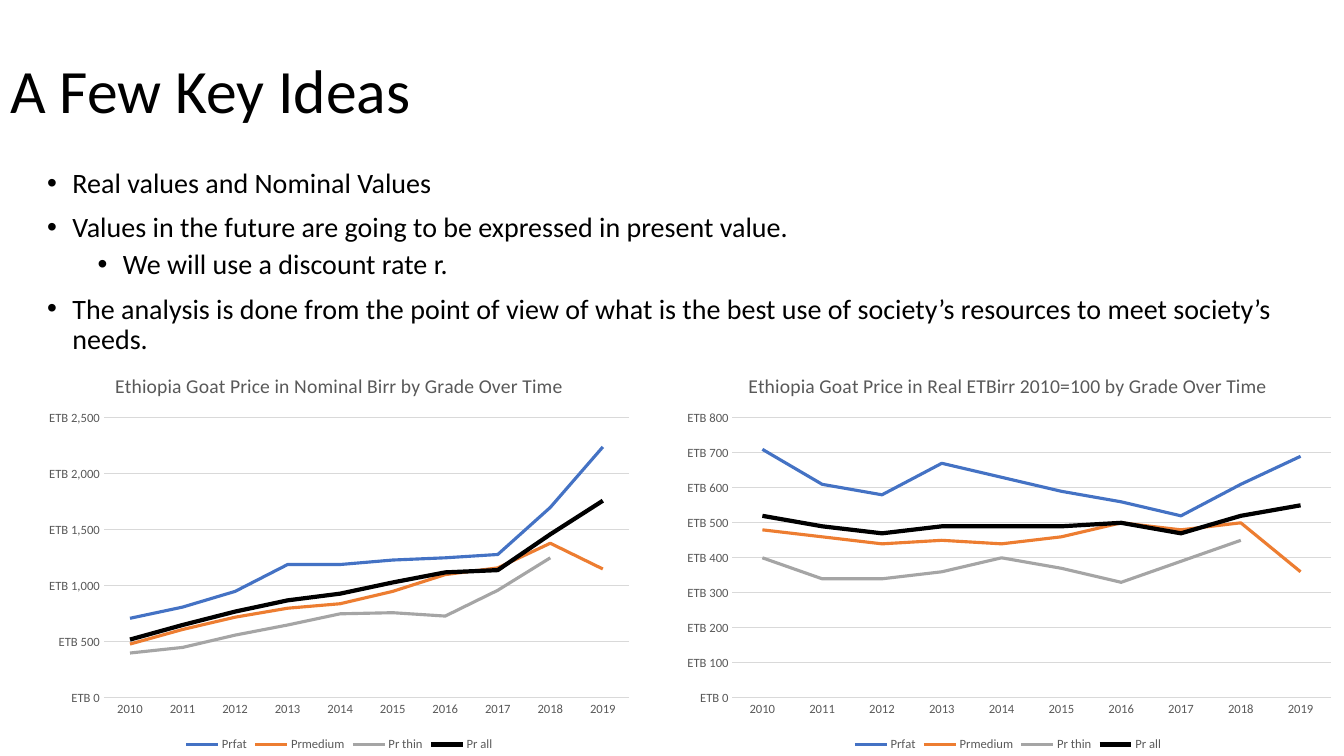
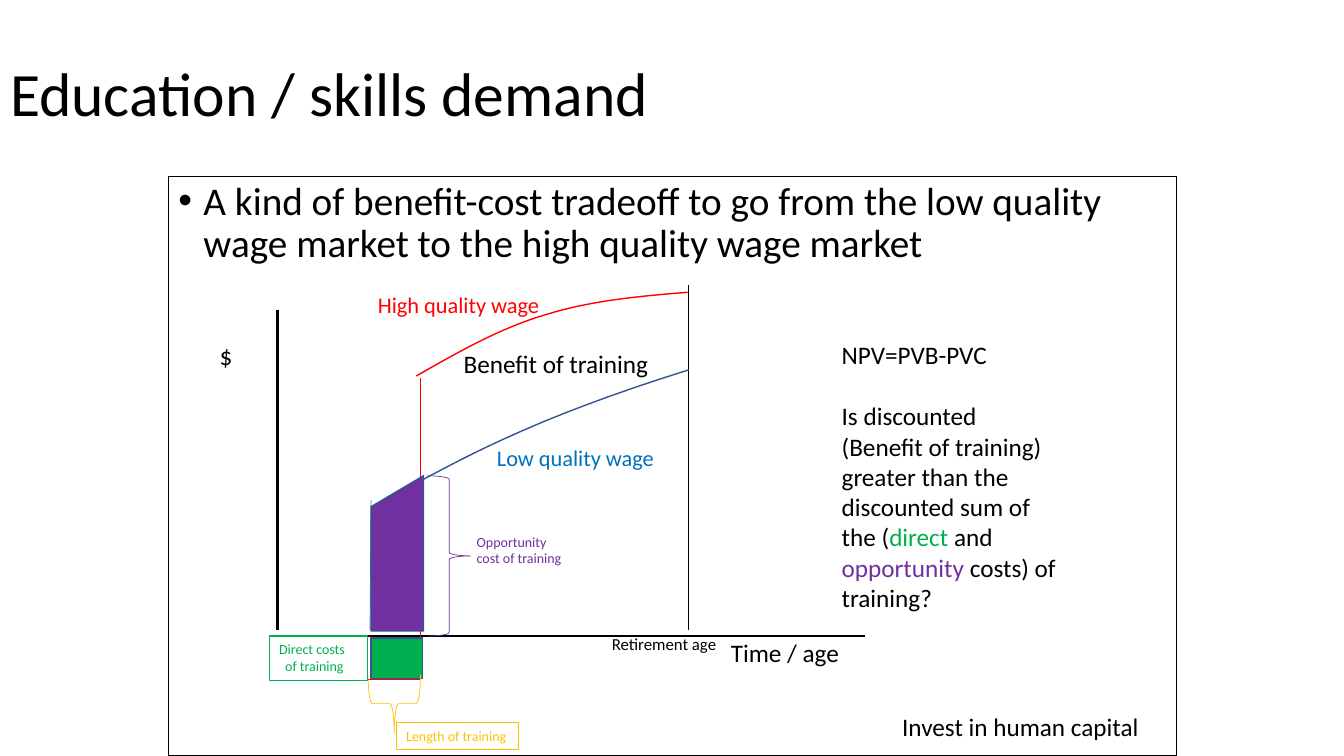
from dataclasses import dataclass

from lxml import etree
from pptx import Presentation
from pptx.chart.data import CategoryChartData
from pptx.dml.color import RGBColor
from pptx.enum.chart import XL_CHART_TYPE, XL_LEGEND_POSITION, XL_TICK_MARK
from pptx.enum.shapes import MSO_CONNECTOR, MSO_SHAPE
from pptx.enum.text import MSO_ANCHOR, PP_ALIGN
from pptx.oxml.ns import qn
from pptx.util import Inches, Pt

LINE_CHART = XL_CHART_TYPE.LINE
LEGEND_BOTTOM = XL_LEGEND_POSITION.BOTTOM
NO_TICK = XL_TICK_MARK.NONE
STRAIGHT = MSO_CONNECTOR.STRAIGHT
RECTANGLE = MSO_SHAPE.RECTANGLE
SLOPED_BAR = MSO_SHAPE.FLOWCHART_MANUAL_INPUT
RIGHT_BRACE, LEFT_BRACE = MSO_SHAPE.RIGHT_BRACE, MSO_SHAPE.LEFT_BRACE
MIDDLE, TOP = MSO_ANCHOR.MIDDLE, MSO_ANCHOR.TOP
LEFT = PP_ALIGN.LEFT
TITLE_ONLY = 5


@dataclass(frozen=True)
class Theme:
    font: str = "Calibri"
    black: str = "000000"
    gray_text: str = "595959"
    grid: str = "D9D9D9"
    blue: str = "4472C4"
    dark_blue: str = "325491"
    sky: str = "0070C0"
    orange: str = "ED7D31"
    silver: str = "A5A5A5"
    red: str = "FF0000"
    green: str = "00B050"
    purple: str = "7030A0"
    gold: str = "FFC000"
    title: int = 44
    lead: int = 28
    body: int = 20
    label: int = 18
    wage: int = 16
    chart_title: int = 14
    small: int = 12
    tiny: int = 10
    axis: int = 9


THEME = Theme()
WIDTH, HEIGHT = 13.33, 7.5
TITLE_WIDTH, TITLE_BOTTOM = 12.42, 1.85

# (text, level)
KEY_IDEAS = [
    ("Real values and Nominal Values", 0),
    ("Values in the future are going to be expressed in present value.", 0),
    ("We will use a discount rate r.", 1),
    ("The analysis is done from the point of view of what is the best use of "
     "society’s resources to meet society’s needs.", 0),
]
TRADEOFF = [("A kind of benefit-cost tradeoff to go from the low quality wage market "
             "to the high quality wage market", 0)]

YEARS = [str(year) for year in range(2010, 2020)]
GRADES = [("Prfat", THEME.blue, 2.25), ("Prmedium", THEME.orange, 2.25),
          ("Pr thin", THEME.silver, 2.25), ("Pr all", THEME.black, 3)]
PRICE_CHARTS = [
    dict(title="Ethiopia Goat Price in Nominal Birr by Grade Over Time",
         frame=(0.37, 3.53, 5.99, 3.97), plot=(0.11, 0.155, 0.87, 0.70),
         top=2500, step=500,
         prices=[[710, 810, 950, 1190, 1190, 1230, 1250, 1280, 1700, 2240],
                 [480, 610, 720, 800, 840, 950, 1100, 1160, 1380, 1150],
                 [400, 450, 560, 650, 750, 760, 730, 960, 1250, None],
                 [520, 650, 770, 870, 930, 1030, 1120, 1140, 1460, 1760]]),
    dict(title="Ethiopia Goat Price in Real ETBirr 2010=100 by Grade Over Time",
         frame=(WIDTH / 2, 3.53, WIDTH / 2, 3.97), plot=(0.09, 0.155, 0.89, 0.70),
         top=800, step=100,
         prices=[[710, 610, 580, 670, 630, 590, 560, 520, 610, 690],
                 [480, 460, 440, 450, 440, 460, 500, 480, 500, 360],
                 [400, 340, 340, 360, 400, 370, 330, 390, 450, None],
                 [520, 490, 470, 490, 490, 490, 500, 470, 520, 550]]),
]

# Places on the wage diagram
AXIS_X, AXIS_Y = 2.75, 6.31
TRAINING_START, TRAINING_END, RETIREMENT = 3.67, 4.17, 6.83
COST_BOTTOM = 6.74

# (start, end, color, weight)
DIAGRAM_LINES = [
    ((AXIS_X, 3.08), (AXIS_X, 6.25), THEME.black, 2),
    ((AXIS_X, AXIS_Y), (8.58, AXIS_Y), THEME.black, 2),
    ((TRAINING_START, 6.25), (3.68, 4.96), THEME.blue, 0.5),
    ((TRAINING_START, AXIS_Y), (TRAINING_START, 6.71), THEME.red, 0.5),
    ((TRAINING_END, COST_BOTTOM), (TRAINING_END, 6.28), THEME.red, 0.5),
    ((3.65, COST_BOTTOM), (TRAINING_END, COST_BOTTOM), THEME.red, 0.5),
    ((TRAINING_END, 3.75), (TRAINING_END, AXIS_Y), THEME.red, 0.5),
    ((RETIREMENT, 6.25), (RETIREMENT, 2.83), THEME.black, 0.5),
]
# (start, cubic segments, color)
WAGE_CURVES = [
    ((3.83, 4.96), [((4.55, 4.56), (5.26, 4.16), (6.83, 3.67))], THEME.dark_blue),
    ((4.13, 3.73), [((4.55, 3.49), (4.97, 3.25), (5.42, 3.12)),
                    ((5.87, 2.98), (6.34, 2.94), (6.82, 2.9))], THEME.red),
]
# (preset, frame, fill, line, weight, rotation)
COST_SHAPES = [
    (RECTANGLE, (3.68, 6.33, 0.51, 0.4), THEME.green, THEME.dark_blue, 1, 0),
    (SLOPED_BAR, (3.68, 4.72, 0.52, 1.54), THEME.purple, THEME.dark_blue, 1, 0),
    (RIGHT_BRACE, (4.24, 4.72, 0.43, 1.59), None, THEME.purple, 0.5, 0),
    (LEFT_BRACE, (3.62, 6.72, 0.58, 0.52), None, THEME.gold, 0.5, 270),
]
# (text, frame, size, color, wraps)
LABELS = [
    ("Time / age", (7.15, 6.27, 1.29, 0.4), THEME.label, THEME.black, False),
    ("$", (2.08, 3.33, 0.34, 0.4), THEME.label, THEME.black, False),
    ("High quality wage", (3.65, 2.84, 2.19, 0.37), THEME.wage, THEME.red, True),
    ("Low quality wage", (4.83, 4.36, 1.99, 0.37), THEME.wage, THEME.sky, True),
    ("Retirement age", (5.97, 6.24, 2, 0.3), THEME.small, THEME.black, True),
    ("Opportunity cost of training", (4.63, 5.24, 1.12, 0.44), THEME.tiny, THEME.purple, True),
    ("Benefit of training", (4.5, 3.41, 2.06, 0.4), THEME.label, THEME.black, False),
    ("Invest in human capital", (8.85, 7.01, 2.57, 0.4), THEME.label, THEME.black, False),
]
NPV_QUESTION = [
    ("Is discounted (Benefit of training) greater than the discounted sum of the (", THEME.black),
    ("direct", THEME.green), (" and ", THEME.black),
    ("opportunity ", THEME.purple), ("costs) of training?", THEME.black),
]


def rgb(color):
    return RGBColor.from_string(color)


def inches(values):
    return [Inches(value) for value in values]


def set_font(font, size, color):
    font.name, font.size, font.bold = THEME.font, Pt(size), False
    font.color.rgb = rgb(color)


def set_line(line, color, weight):
    line.color.rgb = rgb(color)
    line.width = Pt(weight)


def add_run(paragraph, text, size, color=THEME.black):
    run = paragraph.add_run()
    run.text = text
    set_font(run.font, size, color)


def add_title_slide(presentation, title, top=0):
    slide = presentation.slides.add_slide(presentation.slide_layouts[TITLE_ONLY])
    shape = slide.shapes.title
    shape.left, shape.top, shape.width, shape.height = inches(
        (0, top, TITLE_WIDTH, TITLE_BOTTOM - top))
    frame = shape.text_frame
    frame.vertical_anchor = MIDDLE
    paragraph = frame.paragraphs[0]
    paragraph.alignment, paragraph.line_spacing = LEFT, 0.9
    add_run(paragraph, title, THEME.title)
    return slide


def add_text(slide, place, paragraphs, size, outline=None, wrap=True):
    """Add a text box; each paragraph is a list of (text, color) runs."""
    box = slide.shapes.add_textbox(*inches(place))
    frame = box.text_frame
    frame.word_wrap, frame.vertical_anchor = wrap, TOP
    if outline:
        set_line(box.line, outline, 0.75)
    for index, runs in enumerate(paragraphs):
        paragraph = frame.add_paragraph() if index else frame.paragraphs[0]
        paragraph.alignment = LEFT
        for text, color in runs:
            add_run(paragraph, text, size, color)
    return frame.paragraphs


def indent(paragraph, left, first=0.0):
    properties = paragraph._p.get_or_add_pPr()
    properties.set("marL", str(Inches(left)))
    properties.set("indent", str(Inches(first)))
    return properties


def add_bullets(slide, place, items, size, outline=None):
    runs = [[(text, THEME.black)] for text, _ in items]
    paragraphs = add_text(slide, place, runs, size, outline)
    for paragraph, (_, level) in zip(paragraphs, items):
        paragraph.level = level
        paragraph.line_spacing = 0.9
        paragraph.space_before = Pt(5 if level else 10)
        properties = indent(paragraph, 0.25 + 0.5 * level, -0.25)
        etree.SubElement(properties, qn("a:buFont")).set("typeface", "Arial")
        etree.SubElement(properties, qn("a:buChar")).set("char", "•")


def place_plot(chart, shares):
    """Fix the inner plot area as shares of the chart frame."""
    area = chart._chartSpace.find(".//" + qn("c:plotArea"))
    for old_layout in area.findall(qn("c:layout")):
        area.remove(old_layout)
    layout = etree.Element(qn("c:layout"))
    area.insert(0, layout)
    manual = etree.SubElement(layout, qn("c:manualLayout"))
    settings = [("layoutTarget", "inner"), ("xMode", "edge"), ("yMode", "edge"),
                *zip("xywh", shares)]
    for tag, value in settings:
        etree.SubElement(manual, qn("c:" + tag)).set("val", str(value))


def add_price_chart(slide, content):
    data = CategoryChartData()
    data.categories = YEARS
    for (name, _, _), prices in zip(GRADES, content["prices"]):
        data.add_series(name, prices)
    chart = slide.shapes.add_chart(LINE_CHART, *inches(content["frame"]), data).chart
    set_font(chart.font, THEME.tiny, THEME.black)
    chart.has_title = True
    add_run(chart.chart_title.text_frame.paragraphs[0], content["title"],
            THEME.chart_title, THEME.gray_text)
    chart.has_legend = True
    chart.legend.position = LEGEND_BOTTOM
    chart.legend.include_in_layout = False
    set_font(chart.legend.font, THEME.axis, THEME.gray_text)

    for axis in (chart.category_axis, chart.value_axis):
        axis.major_tick_mark = axis.minor_tick_mark = NO_TICK
        set_font(axis.tick_labels.font, THEME.axis, THEME.gray_text)
    set_line(chart.category_axis.format.line, THEME.grid, 0.75)
    values = chart.value_axis
    values.format.line.fill.background()
    values.minimum_scale, values.maximum_scale = 0, content["top"]
    values.major_unit = content["step"]
    set_line(values.major_gridlines.format.line, THEME.grid, 0.75)
    values.tick_labels.number_format = r"[$ETB]\ #,##0"
    values.tick_labels.number_format_is_linked = False

    plot = chart.plots[0]
    plot.vary_by_categories = False
    for series, (_, color, weight) in zip(plot.series, GRADES):
        series.smooth = False
        set_line(series.format.line, color, weight)
    place_plot(chart, content["plot"])


def add_line(slide, start, end, color, weight):
    connector = slide.shapes.add_connector(STRAIGHT, *inches(start + end))
    set_line(connector.line, color, weight)
    etree.SubElement(connector._element.spPr, qn("a:effectLst"))


def curve_points(start, segments, steps=16):
    """Sample joined cubic Bezier segments."""
    points = []
    for first, second, end in segments:
        for step in range(1, steps + 1):
            t = step / steps
            weights = ((1 - t) ** 3, 3 * t * (1 - t) ** 2, 3 * t * t * (1 - t), t ** 3)
            points.append([sum(weight * value for weight, value in zip(weights, axis))
                           for axis in zip(start, first, second, end)])
        start = end
    return points


def style_shape(shape, fill, line, weight):
    shape.shadow.inherit = False
    if fill:
        shape.fill.solid()
        shape.fill.fore_color.rgb = rgb(fill)
    else:
        shape.fill.background()
    set_line(shape.line, line, weight)


def add_curve(slide, start, segments, color):
    builder = slide.shapes.build_freeform(*inches(start))
    builder.add_line_segments([inches(point) for point in curve_points(start, segments)],
                              close=False)
    style_shape(builder.convert_to_shape(), None, color, 1)


def build_key_ideas(presentation):
    slide = add_title_slide(presentation, "A Few Key Ideas")
    add_bullets(slide, (0.37, 1.63, 12.39, 1.9), KEY_IDEAS, THEME.body)
    for content in PRICE_CHARTS:
        add_price_chart(slide, content)


def build_skills_demand(presentation):
    slide = add_title_slide(presentation, "Education / skills demand", 0.06)
    add_bullets(slide, (1.67, 1.75, 10, 5.75), TRADEOFF, THEME.lead, THEME.black)
    for line in DIAGRAM_LINES:
        add_line(slide, *line)
    for curve in WAGE_CURVES:
        add_curve(slide, *curve)
    for preset, place, fill, line, weight, rotation in COST_SHAPES:
        shape = slide.shapes.add_shape(preset, *inches(place))
        style_shape(shape, fill, line, weight)
        shape.rotation = rotation
    for text, place, size, color, wrap in LABELS:
        add_text(slide, place, [[(text, color)]], size, wrap=wrap)
    direct_costs = add_text(slide, (2.67, AXIS_Y, 0.98, 0.44),
                            [[("Direct costs", THEME.green)], [("of training", THEME.green)]],
                            THEME.tiny, THEME.green)
    indent(direct_costs[1], 0.06)
    add_text(slide, (3.93, 7.17, 1.21, 0.27), [[("Length of training", THEME.gold)]],
             THEME.tiny, THEME.gold, wrap=False)
    npv = add_text(slide, (8.25, 3.32, 2.33, 2.83),
                   [[("NPV=PVB-PVC", THEME.black)], NPV_QUESTION], THEME.label)
    npv[1].space_before = Pt(22)


def main():
    presentation = Presentation()
    presentation.slide_width, presentation.slide_height = inches((WIDTH, HEIGHT))
    build_key_ideas(presentation)
    build_skills_demand(presentation)
    presentation.save("out.pptx")


if __name__ == "__main__":
    main()
